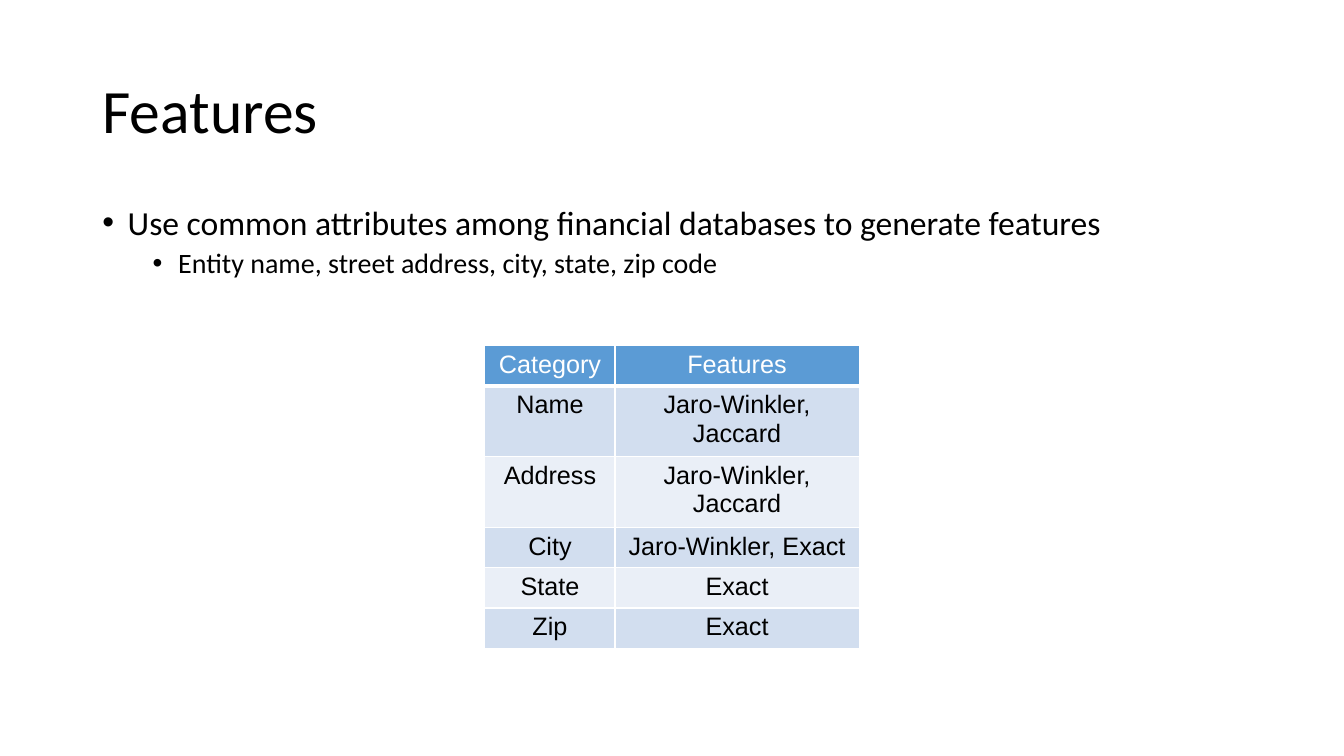
from typing import NamedTuple

from pptx import Presentation
from pptx.dml.color import RGBColor
from pptx.enum.text import MSO_ANCHOR as Anchor, PP_ALIGN as Align
from pptx.oxml.ns import qn
from pptx.util import Cm, Pt
from lxml.etree import SubElement

COLORS = {
    "text": "000000",
    "white": "FFFFFF",
    "header": "5B9BD5",
    "band_dark": "D2DEEF",
    "band_light": "EAEFF7",
}


class Bullet(NamedTuple):
    text: str
    level: int
    size: float
    indent: float
    space_before: float


class FeatureRow(NamedTuple):
    category: str
    features: str


BULLETS = [
    Bullet("Use common attributes among financial databases to generate features", 0, 24, 0.64, 0),
    Bullet("Entity name, street address, city, state, zip code", 1, 20, 1.91, 5),
]
FEATURE_ROWS = [
    FeatureRow("Category", "Features"),
    FeatureRow("Name", "Jaro-Winkler, Jaccard"),
    FeatureRow("Address", "Jaro-Winkler, Jaccard"),
    FeatureRow("City", "Jaro-Winkler, Exact"),
    FeatureRow("State", "Exact"),
    FeatureRow("Zip", "Exact"),
]
COLUMN_WIDTHS = [3.28, 6.15]
HEADER_HEIGHT, ROW_HEIGHT = 0.91, 0.86
HANGING = 0.64


def add_run(paragraph, text: str, font: str, size: float, color: str) -> None:
    run = paragraph.add_run()
    run.text = text
    run.font.name = font
    run.font.size = Pt(size)
    run.font.bold = False
    run.font.color.rgb = RGBColor.from_string(COLORS[color])


def write_title(title) -> None:
    title.left, title.top, title.width, title.height = Cm(2.33), Cm(1.01), Cm(29.21), Cm(3.68)
    title.text_frame.vertical_anchor = Anchor.MIDDLE
    title.text_frame.word_wrap = True
    paragraph = title.text_frame.paragraphs[0]
    paragraph.alignment = Align.LEFT
    paragraph.line_spacing = 0.9
    add_run(paragraph, "Features", "Calibri", 44, "text")


def write_bullet(paragraph, bullet: Bullet) -> None:
    paragraph.level = bullet.level
    paragraph.line_spacing = 0.9
    paragraph.space_before = Pt(bullet.space_before)
    properties = paragraph._p.get_or_add_pPr()
    properties.set("marL", str(Cm(bullet.indent)))
    properties.set("indent", str(-Cm(HANGING)))
    SubElement(properties, qn("a:buFont"), typeface="Arial")
    SubElement(properties, qn("a:buChar"), char="•")
    add_run(paragraph, bullet.text, "Calibri", bullet.size, "text")


def add_bullets(slide) -> None:
    frame = slide.shapes.add_textbox(Cm(2.33), Cm(5.07), Cm(29.21), Cm(12.09)).text_frame
    frame.word_wrap = True
    for index, bullet in enumerate(BULLETS):
        write_bullet(frame.add_paragraph() if index else frame.paragraphs[0], bullet)


def set_borders(cell, top: float, bottom: float) -> None:
    properties = cell._tc.get_or_add_tcPr()
    for position, (side, width) in enumerate({"L": 1, "R": 1, "T": top, "B": bottom}.items()):
        line = SubElement(properties, qn(f"a:ln{side}"), w=str(Pt(width)))
        fill = SubElement(line, qn("a:solidFill"))
        SubElement(fill, qn("a:srgbClr"), val=COLORS["white"])
        properties.insert(position, line)


def add_feature_table(slide) -> None:
    height = HEADER_HEIGHT + ROW_HEIGHT * (len(FEATURE_ROWS) - 1)
    table = slide.shapes.add_table(
        len(FEATURE_ROWS), len(COLUMN_WIDTHS),
        Cm(12.22), Cm(8.71), Cm(sum(COLUMN_WIDTHS)), Cm(height),
    ).table
    for column, width in zip(table.columns, COLUMN_WIDTHS):
        column.width = Cm(width)
    for index, feature_row in enumerate(FEATURE_ROWS):
        is_header = index == 0
        table.rows[index].height = Cm(HEADER_HEIGHT if is_header else ROW_HEIGHT)
        band = "header" if is_header else "band_dark" if index % 2 else "band_light"
        for column_index, text in enumerate(feature_row):
            cell = table.cell(index, column_index)
            cell.fill.solid()
            cell.fill.fore_color.rgb = RGBColor.from_string(COLORS[band])
            set_borders(cell, 3 if index == 1 else 1, 3 if is_header else 1)
            paragraph = cell.text_frame.paragraphs[0]
            paragraph.alignment = Align.CENTER
            add_run(paragraph, text, "Arial", 18, "white" if is_header else "text")


def main() -> None:
    presentation = Presentation()
    presentation.slide_width, presentation.slide_height = Cm(33.87), Cm(19.05)
    slide = presentation.slides.add_slide(presentation.slide_layouts[5])
    write_title(slide.shapes.title)
    add_bullets(slide)
    add_feature_table(slide)
    presentation.save("out.pptx")


if __name__ == "__main__":
    main()
